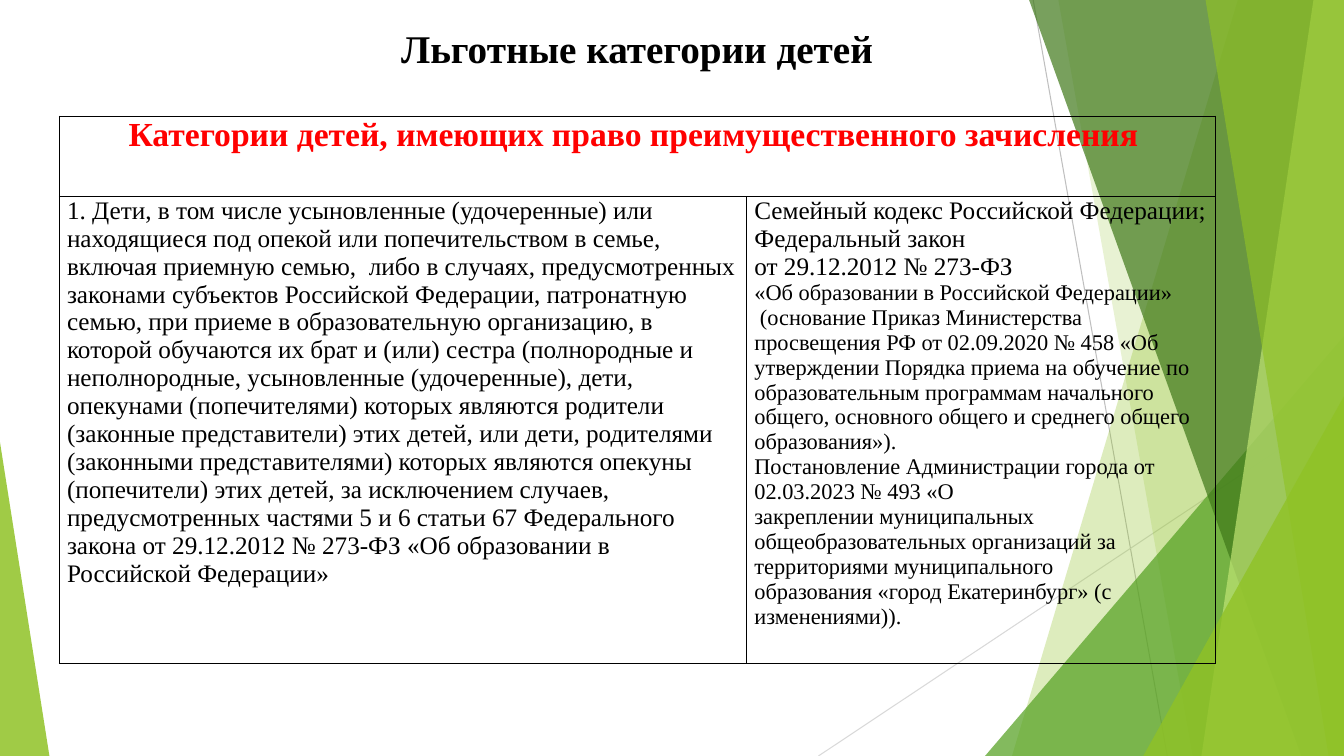
from dataclasses import dataclass

from pptx import Presentation
from pptx.dml.color import RGBColor as Rgb
from pptx.enum.shapes import MSO_AUTO_SHAPE_TYPE as Kind, MSO_CONNECTOR as Link
from pptx.enum.text import MSO_ANCHOR as Anchor, PP_ALIGN as Align
from pptx.oxml.ns import qn
from pptx.util import Pt
from lxml.etree import SubElement as Sub

WIDE, HIGH = 960, 540
FONT = "Times New Roman"
HUES = {
    "black": "000000", "red": "FF0000", "lime": "90C226", "green": "54A021",
    "dark": "3F7819", "pale": "C0E474", "grey": "BFBFBF", "mist": "D9D9D9",
}


@dataclass
class Line:
    start: tuple[float, float]
    end: tuple[float, float]
    hue: str


@dataclass
class Band:
    """Runs to the right edge; its left side slants from top to foot."""
    top: float
    foot: float
    hue: str
    alpha: int


@dataclass
class Wedge:
    """Right-angled triangle standing on the bottom edge."""
    left: float
    width: float
    height: float
    peak: int
    hue: str
    alpha: int


@dataclass
class Para:
    text: str
    size: float
    hue: str = "black"
    bold: bool = False
    align: Align = Align.LEFT


LINES = [
    Line((738, 0), (833.8, HIGH), "grey"),
    Line((WIDE, 290.2), (584.6, HIGH), "mist"),
]
FACETS = [
    Band(884.2, 722.9, "lime", 30),
    Band(756, 851.8, "lime", 20),
    Wedge(703.6, 256.4, 300, 1, "green", 72),
    Band(735.1, 929.5, "dark", 70),
    Band(938.2, 858.2, "pale", 70),
    Band(861.1, 949, "lime", 65),
    Wedge(816.6, 143.4, 257, 1, "lime", 80),
    Wedge(0, 35.3, 224, 0, "lime", 85),
]

TITLE = Para("Льготные категории детей", 28, bold=True, align=Align.CENTER)
HEAD = Para("Категории детей, имеющих право преимущественного зачисления ",
            24, "red", True, Align.CENTER)
GROUP = Para(
    "1. Дети, в том числе усыновленные (удочеренные) или находящиеся под опекой "
    "или попечительством в семье, включая приемную семью,  либо в случаях, "
    "предусмотренных законами субъектов Российской Федерации, патронатную семью, "
    "при приеме в образовательную организацию, в которой обучаются их брат и (или) "
    "сестра (полнородные и неполнородные, усыновленные (удочеренные), дети, "
    "опекунами (попечителями) которых являются родители (законные представители) "
    "этих детей, или дети, родителями (законными представителями) которых являются "
    "опекуны (попечители) этих детей, за исключением случаев, предусмотренных "
    "частями 5 и 6 статьи 67 Федерального закона от 29.12.2012 № 273-ФЗ "
    "«Об образовании в Российской Федерации»", 18)
LAWS = [
    Para("Семейный кодекс Российской Федерации; Федеральный закон", 18),
    Para("от 29.12.2012 № 273-ФЗ", 18),
    Para("«Об образовании в Российской Федерации»", 16),
    Para(" (основание Приказ Министерства просвещения РФ от 02.09.2020 № 458 «Об", 16),
    Para("утверждении Порядка приема на обучение по образовательным программам "
         "начального", 16),
    Para("общего, основного общего и среднего общего образования»).", 16),
    Para("Постановление Администрации города от 02.03.2023 № 493 «О", 16),
    Para("закреплении муниципальных общеобразовательных организаций за "
         "территориями муниципального", 16),
    Para("образования «город Екатеринбург» (с изменениями)).", 16),
]


def tint(name: str) -> Rgb:
    return Rgb.from_string(HUES[name])


def write(frame, paras: list[Para]) -> None:
    frame.word_wrap = True
    for i, para in enumerate(paras):
        p = frame.add_paragraph() if i else frame.paragraphs[0]
        p.alignment = para.align
        run = p.add_run()
        run.text = para.text
        font = run.font
        font.name, font.size, font.bold = FONT, Pt(para.size), para.bold
        font.color.rgb = tint(para.hue)


def draw_line(slide, line: Line) -> None:
    ends = [Pt(v) for v in (*line.start, *line.end)]
    item = slide.shapes.add_connector(Link.STRAIGHT, *ends)
    item.line.color.rgb = tint(line.hue)
    item.line.width = Pt(0.75)
    Sub(item._element.spPr, qn("a:effectLst"))


def draw_facet(slide, facet: Band | Wedge) -> None:
    if isinstance(facet, Band):
        path = slide.shapes.build_freeform(Pt(facet.top), Pt(0))
        path.add_line_segments([(Pt(WIDE), Pt(0)), (Pt(WIDE), Pt(HIGH)),
                                (Pt(facet.foot), Pt(HIGH))], close=True)
        item = path.convert_to_shape()
    else:
        item = slide.shapes.add_shape(
            Kind.ISOSCELES_TRIANGLE, Pt(facet.left), Pt(HIGH - facet.height),
            Pt(facet.width), Pt(facet.height))
        item.adjustments[0] = facet.peak
    item.shadow.inherit = False
    item.line.fill.background()
    item.fill.solid()
    item.fill.fore_color.rgb = tint(facet.hue)
    color = item._element.spPr.find(qn("a:solidFill"))[0]
    Sub(color, qn("a:alpha"), val=str(facet.alpha * 1000))


def style_cell(cell) -> None:
    cell.margin_left = cell.margin_right = Pt(5.4)
    cell.margin_top = cell.margin_bottom = Pt(0)
    props = cell._tc.get_or_add_tcPr()
    for side in ("lnL", "lnR", "lnT", "lnB"):
        edge = Sub(props, qn(f"a:{side}"), w=str(Pt(1)))
        fill = Sub(edge, qn("a:solidFill"))
        Sub(fill, qn("a:srgbClr"), val=HUES["black"])
    cell.fill.background()


def draw_table(slide) -> None:
    cols, rows = (491, 334.8), (57.6, 333.6)
    table = slide.shapes.add_table(
        len(rows), len(cols), Pt(42.5), Pt(83), Pt(sum(cols)), Pt(sum(rows))).table
    table.first_row = table.horz_banding = False
    for col, width in zip(table.columns, cols):
        col.width = Pt(width)
    for row, height in zip(table.rows, rows):
        row.height = Pt(height)
    for cell in table.iter_cells():
        style_cell(cell)
    table.cell(0, 0).merge(table.cell(0, 1))
    write(table.cell(0, 0).text_frame, [HEAD])
    write(table.cell(1, 0).text_frame, [GROUP])
    write(table.cell(1, 1).text_frame, LAWS)


def main() -> None:
    deck = Presentation()
    deck.slide_width, deck.slide_height = Pt(WIDE), Pt(HIGH)
    slide = deck.slides.add_slide(deck.slide_layouts[5])

    # Green facets and thin lines
    for line in LINES:
        draw_line(slide, line)
    for facet in FACETS:
        draw_facet(slide, facet)

    # Title
    title = slide.shapes.title
    title.left, title.top = Pt(181.4), Pt(13.7)
    title.width, title.height = Pt(547.2), Pt(41)
    title.text_frame.vertical_anchor = Anchor.TOP
    write(title.text_frame, [TITLE])

    # Table of rights
    draw_table(slide)
    deck.save("out.pptx")


if __name__ == "__main__":
    main()
